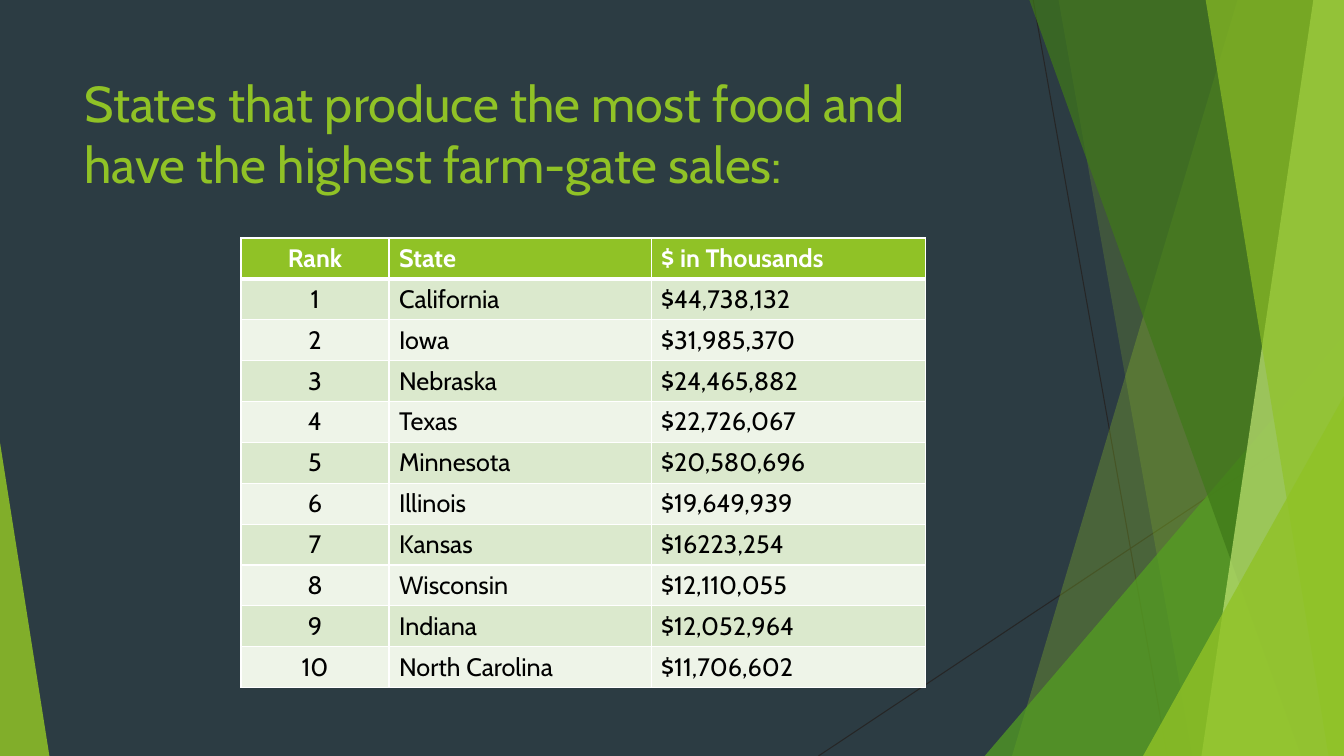
"""Build the slide ranking the states by farm-gate sales."""
from lxml import etree
from pptx import Presentation
from pptx.dml.color import RGBColor
from pptx.enum.shapes import MSO_CONNECTOR, MSO_SHAPE
from pptx.enum.text import MSO_ANCHOR, PP_ALIGN
from pptx.oxml.ns import qn
from pptx.util import Pt

STRAIGHT = MSO_CONNECTOR.STRAIGHT
TRIANGLE = MSO_SHAPE.ISOSCELES_TRIANGLE
TOP = MSO_ANCHOR.TOP
CENTER, LEFT = PP_ALIGN.CENTER, PP_ALIGN.LEFT

TITLE = "States that produce the most food and have the highest farm-gate sales:"
HEADER = ("Rank", "State", "$ in Thousands")
SALES = [
    ("California", "$44,738,132"),
    ("Iowa", "$31,985,370"),
    ("Nebraska", "$24,465,882"),
    ("Texas", "$22,726,067"),
    ("Minnesota", "$20,580,696"),
    ("Illinois", "$19,649,939"),
    ("Kansas", "$16223,254"),
    ("Wisconsin", "$12,110,055"),
    ("Indiana", "$12,052,964"),
    ("North Carolina", "$11,706,602"),
]

FONT = "Cabin"
COLORS = {
    "background": "2C3C43",
    "line": "262626",
    "lime": "90C226",
    "green": "54A021",
    "forest": "3F7819",
    "pale": "C0E474",
    "white": "FFFFFF",
    "black": "000000",
    "odd": "DBE9CD",
    "even": "EEF4E8",
}

WIDTH, HEIGHT = 960, 540
PANEL_TOP = -0.6
TITLE_BOX = (53.3, 48, 676.8, 103.9)
TABLE_LEFT, TABLE_TOP = 172.1, 170
COLUMN_WIDTHS = (105.8, 187.2, 196.2)
ROW_HEIGHT = 29.2
THIN, THICK = 1, 3

HAIRLINES = [(738, 0, 833.8, HEIGHT), (WIDTH, 290.2, 584.6, HEIGHT)]
DECORATIONS = [
    ("panel", (884.2, 722.9), "lime", 30),
    ("panel", (756, 851.8), "lime", 20),
    ("triangle", (703.4, 239.8, WIDTH, 1), "green", 72),
    ("panel", (735.1, 929.5), "forest", 70),
    ("panel", (938.2, 858.2), "pale", 70),
    ("panel", (861.1, 949), "lime", 65),
    ("triangle", (816.5, 283, WIDTH, 1), "lime", 80),
    ("triangle", (0, 316.1, 35.3, 0), "lime", 85),
]


def color(name):
    return RGBColor.from_string(COLORS[name])


def add_hairline(shapes, ends):
    line = shapes.add_connector(STRAIGHT, *map(Pt, ends))
    line.line.color.rgb = color("line")
    line.line.width = Pt(0.75)
    etree.SubElement(line._element.spPr, qn("a:effectLst"))


def add_panel(shapes, top_x, bottom_x):
    corners = [(WIDTH, PANEL_TOP), (WIDTH, HEIGHT), (bottom_x, HEIGHT)]
    builder = shapes.build_freeform(Pt(top_x), Pt(PANEL_TOP))
    builder.add_line_segments([(Pt(x), Pt(y)) for x, y in corners], close=True)
    return builder.convert_to_shape()


def add_triangle(shapes, left, top, right, apex):
    shape = shapes.add_shape(
        TRIANGLE, Pt(left), Pt(top), Pt(right - left), Pt(HEIGHT - top))
    shape.adjustments[0] = apex
    return shape


def paint(shape, name, opacity):
    shape.shadow.inherit = False
    shape.line.fill.background()
    shape.fill.solid()
    shape.fill.fore_color.rgb = color(name)
    tint = shape._element.spPr.find(".//" + qn("a:srgbClr"))
    etree.SubElement(tint, qn("a:alpha"), val=str(opacity * 1000))


def style_text(para, size, name, bold=False):
    for span in para.runs:
        span.font.name = FONT
        span.font.size = Pt(size)
        span.font.bold = bold
        span.font.color.rgb = color(name)


def add_title(shapes):
    frame = shapes.add_textbox(*map(Pt, TITLE_BOX)).text_frame
    frame.word_wrap = True
    frame.vertical_anchor = TOP
    frame.text = TITLE
    style_text(frame.paragraphs[0], 36, "lime")


def set_borders(cell, top, bottom):
    properties = cell._tc.get_or_add_tcPr()
    for side, width in (("L", THIN), ("R", THIN), ("T", top), ("B", bottom)):
        edge = etree.SubElement(properties, qn("a:ln" + side), w=str(Pt(width)))
        fill = etree.SubElement(edge, qn("a:solidFill"))
        etree.SubElement(fill, qn("a:srgbClr"), val=COLORS["white"])


def add_sales_table(shapes):
    rows = [HEADER] + [(str(rank), *sale) for rank, sale in enumerate(SALES, 1)]
    table = shapes.add_table(
        len(rows), len(HEADER), Pt(TABLE_LEFT), Pt(TABLE_TOP),
        Pt(sum(COLUMN_WIDTHS)), Pt(ROW_HEIGHT * len(rows))).table
    for column, width in zip(table.columns, COLUMN_WIDTHS):
        column.width = Pt(width)
    for r, values in enumerate(rows):
        table.rows[r].height = Pt(ROW_HEIGHT)
        is_header = r == 0
        shade = "lime" if is_header else "odd" if r % 2 else "even"
        for c, value in enumerate(values):
            cell = table.cell(r, c)
            set_borders(cell, THICK if r == 1 else THIN, THICK if is_header else THIN)
            cell.fill.solid()
            cell.fill.fore_color.rgb = color(shade)
            cell.text_frame.text = value
            para = cell.text_frame.paragraphs[0]
            para.alignment = CENTER if c == 0 else LEFT
            style_text(para, 18, "white" if is_header else "black", is_header)


def main():
    deck = Presentation()
    deck.slide_width, deck.slide_height = Pt(WIDTH), Pt(HEIGHT)
    slide = deck.slides.add_slide(deck.slide_layouts[6])
    slide.background.fill.solid()
    slide.background.fill.fore_color.rgb = color("background")
    makers = {"panel": add_panel, "triangle": add_triangle}
    for ends in HAIRLINES:
        add_hairline(slide.shapes, ends)
    for kind, geometry, name, opacity in DECORATIONS:
        paint(makers[kind](slide.shapes, *geometry), name, opacity)
    add_title(slide.shapes)
    add_sales_table(slide.shapes)
    deck.save("out.pptx")


if __name__ == "__main__":
    main()
